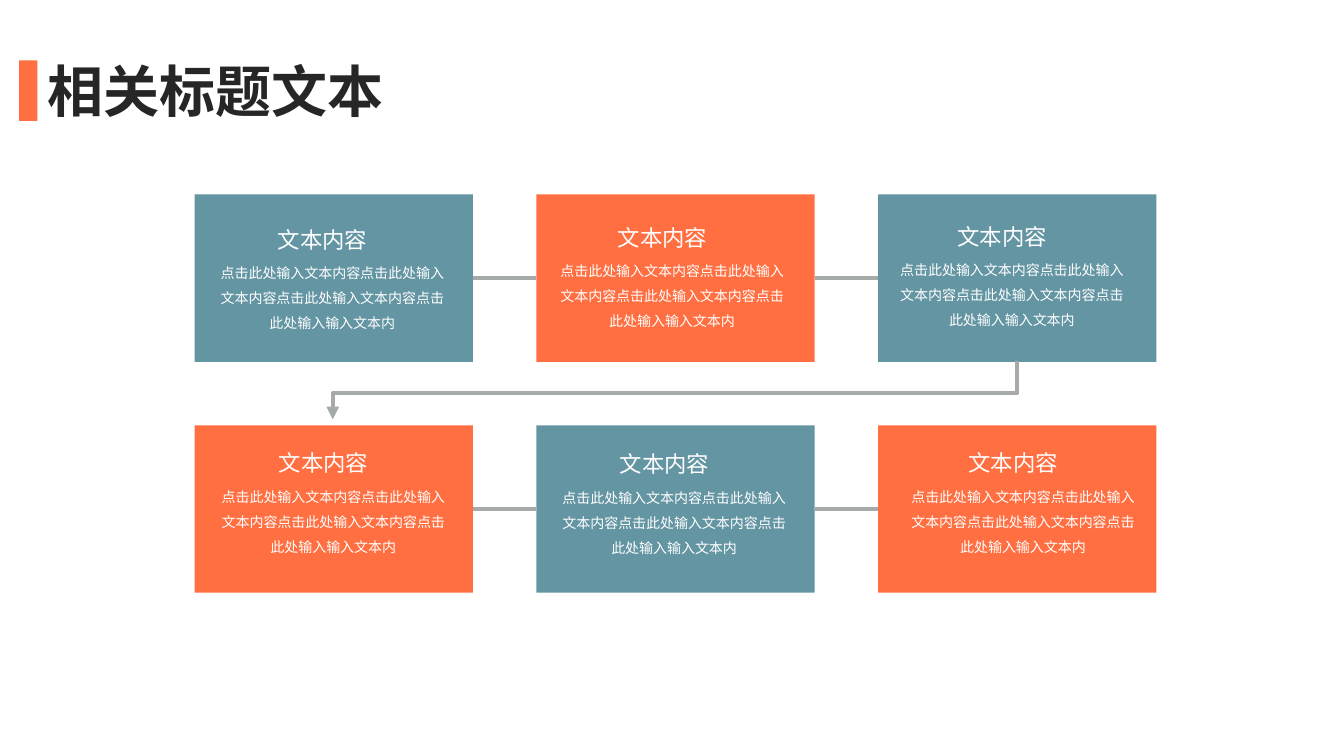
"""Build a slide with six linked text cards in two rows."""
import pptx
import pptx.dml.color
import pptx.enum.shapes
import pptx.enum.text
import pptx.oxml
import pptx.oxml.ns
import pptx.util

Inches = pptx.util.Inches
Pt = pptx.util.Pt
RGBColor = pptx.dml.color.RGBColor
SHAPE = pptx.enum.shapes.MSO_SHAPE
ALIGN = pptx.enum.text.PP_ALIGN

TEAL = RGBColor(0x64, 0x95, 0xA3)
CORAL = RGBColor(0xFF, 0x6F, 0x41)
GRAY = RGBColor(0xA6, 0xAA, 0xA9)
DARK = RGBColor(0x26, 0x26, 0x26)
WHITE = RGBColor(0xFF, 0xFF, 0xFF)
FACE = "Noto Sans CJK SC"
NS = pptx.oxml.ns.nsdecls("a")

HEAD = "文本内容"
BODY = "点击此处输入文本内容点击此处输入文本内容点击此处输入文本内容点击此处输入输入文本内"

deck = pptx.Presentation()
deck.slide_width, deck.slide_height = Inches(13.33), Inches(7.5)
slide = deck.slides.add_slide(deck.slide_layouts[6])
shapes = slide.shapes


def add_block(left, top, width, height, color):
    block = shapes.add_shape(SHAPE.RECTANGLE, *map(Inches, (left, top, width, height)))
    block.shadow.inherit = False
    block.fill.solid()
    block.fill.fore_color.rgb = color
    block.line.fill.background()
    return block


def add_text(place, text, size, color, wrap=True, bold=None, align=None, space=None):
    box = shapes.add_textbox(*map(Inches, place))
    frame = box.text_frame
    frame.word_wrap = wrap
    frame.auto_size = pptx.enum.text.MSO_AUTO_SIZE.SHAPE_TO_FIT_TEXT
    para = frame.paragraphs[0]
    para.alignment, para.line_spacing = align, space
    run = para.add_run()
    run.text = text
    for key, value in {"size": Pt(size), "bold": bold, "name": FACE}.items():
        setattr(run.font, key, value)
    run.font.color.rgb = color
    run._r.get_or_add_rPr().append(
        pptx.oxml.parse_xml(f'<a:ea {NS} typeface="{FACE}"/>'))


cards = []
for row in range(2):
    for col in range(3):
        color = CORAL if (row * 3 + col) % 2 else TEAL
        cards.append(add_block(1.93 + 3.39 * col, 1.93 + 2.29 * row, 2.76, 1.66, color))

for start in (0, 1, 3, 4):
    link = shapes.add_connector(pptx.enum.shapes.MSO_CONNECTOR.STRAIGHT, 0, 0, 0, 0)
    link.begin_connect(cards[start], 3)
    link.end_connect(cards[start + 1], 1)
    link.line.color.rgb = GRAY
    link.line.width = Pt(3)
    link._element.spPr.append(pptx.oxml.parse_xml(f"<a:effectLst {NS}/>"))

pen = shapes.build_freeform(Inches(10.09), Inches(3.58))
bends = [(10.09, 3.9), (3.3, 3.9), (3.3, 4.16)]
pen.add_line_segments([(Inches(x), Inches(y)) for x, y in bends], close=False)
arrow = pen.convert_to_shape()
arrow.shadow.inherit = False
arrow.fill.background()
arrow.line.color.rgb = GRAY
arrow.line.width = Pt(3)
arrow.line._get_or_add_ln().append(
    pptx.oxml.parse_xml(f'<a:tailEnd {NS} type="triangle"/>'))

spots = [(2.04, 2.49), (5.41, 2.47), (8.78, 2.46),
         (2.05, 4.71), (5.43, 4.72), (8.89, 4.71)]
for left, top in spots:
    add_text((left + 0.61, top - 0.3, 1.1, 0.37), HEAD, 16, WHITE,
             wrap=False, align=ALIGN.CENTER)
    add_text((left, top, 2.51, 0.86), BODY, 10, WHITE, align=ALIGN.CENTER, space=1.5)

add_text((0.37, 0.51, 7.05, 0.77), "相关标题文本", 40, DARK, bold=True)
add_block(0.19, 0.6, 0.18, 0.6, CORAL)

deck.save("out.pptx")
